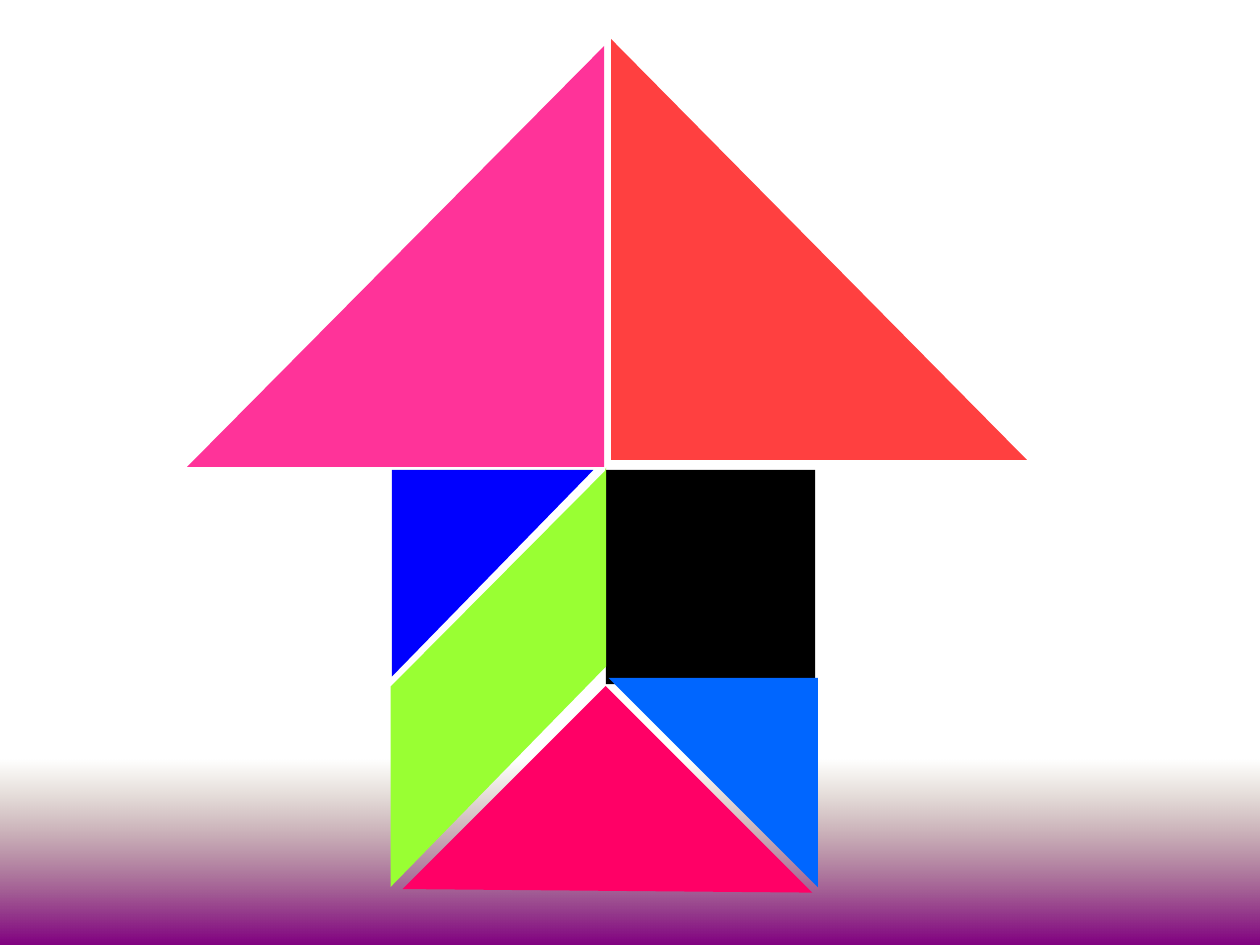
from lxml import etree
from pptx import Presentation
from pptx.dml.color import RGBColor
from pptx.enum.shapes import MSO_SHAPE
from pptx.oxml.ns import qn
from pptx.util import Inches

RECT = MSO_SHAPE.RECTANGLE
TRIANGLE = MSO_SHAPE.RIGHT_TRIANGLE

BAND = (0, 6.03, 10, 1.47)
BAND_STOPS = ["765E2F", "800080"]
PIECES = [
    (TRIANGLE, (3.66, 5.93, 2.32, 2.28), 225, True, "FF0066"),
    (RECT, (4.81, 3.73, 1.66, 1.7), 0, False, "000000"),
    (TRIANGLE, (4.85, 0.31, 3.3, 3.34), 0, False, "FF4040"),
    (TRIANGLE, (1.47, 0.38, 3.34, 3.31), 270, False, "FF3399"),
    (TRIANGLE, (4.83, 5.38, 1.66, 1.66), 180, False, "0066FF"),
    (TRIANGLE, (3.11, 3.73, 1.6, 1.64), 180, True, "0000FF"),
]
PARALLELOGRAM = [(3.1, 7.04), (4.81, 5.29), (4.81, 3.71), (4.8, 3.74),
                 (3.1, 5.45), (3.1, 5.5), (3.1, 7.03)]
PARALLELOGRAM_COLOR = "99FF33"


def rgb(value):
    return RGBColor.from_string(value)


def paint(sp, color):
    sp.shadow.inherit = False
    sp.line.fill.background()
    sp.fill.solid()
    sp.fill.fore_color.rgb = rgb(color)


def add_piece(shapes, kind, box, rotation, flip, color):
    sp = shapes.add_shape(kind, *map(Inches, box))
    sp.rotation = rotation
    if flip:
        sp._element.spPr.find(qn("a:xfrm")).set("flipH", "1")
    paint(sp, color)


def add_parallelogram(shapes):
    points = [(Inches(x), Inches(y)) for x, y in PARALLELOGRAM]
    builder = shapes.build_freeform(*points[0])
    builder.add_line_segments(points[1:], close=True)
    paint(builder.convert_to_shape(), PARALLELOGRAM_COLOR)


def add_band(shapes):
    sp = shapes.add_shape(RECT, *map(Inches, BAND))
    sp.shadow.inherit = False
    sp.line.fill.background()
    sp.fill.gradient()
    sp.fill.gradient_angle = 270
    for stop, color in zip(sp.fill.gradient_stops, BAND_STOPS):
        stop.color.rgb = rgb(color)
    first = sp._element.spPr.find(".//" + qn("a:srgbClr"))
    etree.SubElement(first, qn("a:alpha")).set("val", "0")


def main():
    prs = Presentation()
    prs.slide_width, prs.slide_height = Inches(10), Inches(7.5)
    s = prs.slides.add_slide(prs.slide_layouts[6])
    add_band(s.shapes)
    house = s.shapes.add_group_shape()
    for piece in PIECES:
        add_piece(house.shapes, *piece)
    add_parallelogram(house.shapes)
    prs.save("out.pptx")


if __name__ == "__main__":
    main()
